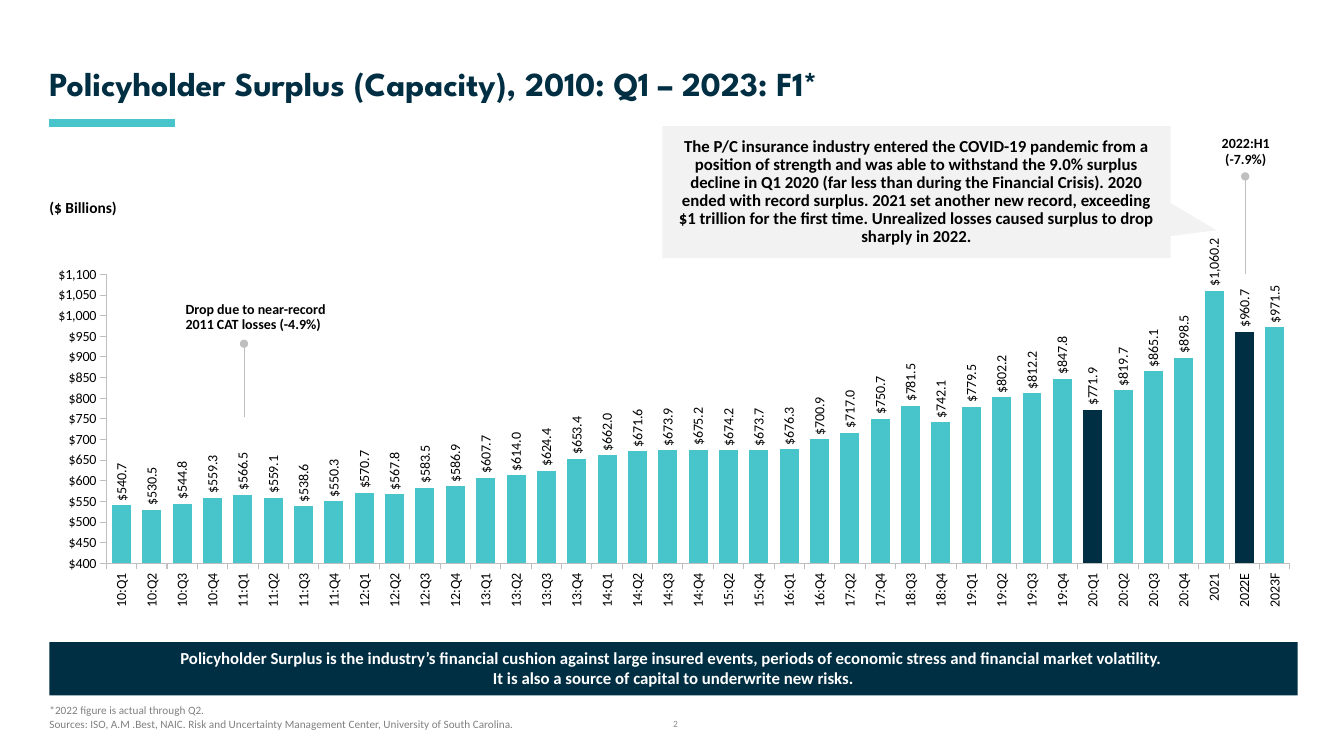
from dataclasses import dataclass

from pptx import Presentation
from pptx.chart.data import CategoryChartData
from pptx.dml.color import RGBColor
from pptx.enum.chart import XL_CHART_TYPE, XL_LABEL_POSITION, XL_TICK_MARK
from pptx.enum.shapes import MSO_CONNECTOR, MSO_SHAPE
from pptx.enum.text import MSO_ANCHOR, PP_ALIGN
from pptx.oxml import parse_xml
from pptx.oxml.ns import nsdecls, qn
from pptx.util import Inches, Pt

COLUMN = XL_CHART_TYPE.COLUMN_CLUSTERED
OUTSIDE_END = XL_LABEL_POSITION.OUTSIDE_END
TICK_OUT, TICK_NONE = XL_TICK_MARK.OUTSIDE, XL_TICK_MARK.NONE
STRAIGHT = MSO_CONNECTOR.STRAIGHT
RECTANGLE, CALLOUT = MSO_SHAPE.RECTANGLE, MSO_SHAPE.RECTANGULAR_CALLOUT
TOP, MIDDLE, BOTTOM = MSO_ANCHOR.TOP, MSO_ANCHOR.MIDDLE, MSO_ANCHOR.BOTTOM
LEFT, CENTER = PP_ALIGN.LEFT, PP_ALIGN.CENTER


@dataclass(frozen=True)
class Theme:
    """Colours, fonts and type sizes of the slide."""
    navy: str = "002E42"
    teal: str = "47C5CA"
    panel: str = "F2F2F2"
    rule: str = "BFBFBF"
    source: str = "808080"
    number: str = "8C8C8C"
    black: str = "000000"
    white: str = "FFFFFF"
    heading_font: str = "League Spartan"
    body_font: str = "Calibri"
    title: float = 24
    message: float = 12
    unit: float = 11
    label: float = 10
    footnote: float = 8
    page: float = 6.8


THEME = Theme()
SURPLUS = {
    "10:Q1": 540.7, "10:Q2": 530.5, "10:Q3": 544.8, "10:Q4": 559.3,
    "11:Q1": 566.5, "11:Q2": 559.1, "11:Q3": 538.6, "11:Q4": 550.3,
    "12:Q1": 570.7, "12:Q2": 567.8, "12:Q3": 583.5, "12:Q4": 586.9,
    "13:Q1": 607.7, "13:Q2": 614.0, "13:Q3": 624.4, "13:Q4": 653.4,
    "14:Q1": 662.0, "14:Q2": 671.6, "14:Q3": 673.9, "14:Q4": 675.2,
    "15:Q2": 674.2, "15:Q4": 673.7, "16:Q1": 676.3, "16:Q4": 700.9,
    "17:Q2": 717.0, "17:Q4": 750.7, "18:Q3": 781.5, "18:Q4": 742.1,
    "19:Q1": 779.5, "19:Q2": 802.2, "19:Q3": 812.2, "19:Q4": 847.8,
    "20:Q1": 771.9, "20:Q2": 819.7, "20:Q3": 865.1, "20:Q4": 898.5,
    "2021": 1060.2, "2022E": 960.7, "2023F": 971.5,
}
HIGHLIGHTS = ("20:Q1", "2022E")


def color(value):
    """Turn a hex string into a colour."""
    return RGBColor.from_string(value)


def format_font(font, size, fill=THEME.black, name=THEME.body_font, bold=False):
    """Apply the type settings to a font."""
    font.size, font.name, font.bold = Pt(size), name, bold
    font.color.rgb = color(fill)


def write(shape, *lines, align=LEFT, anchor=TOP, insets=(0, 0, 0, 0), wrap=True,
          spacing=1.0, before=0, **font):
    """Fill a shape with one formatted paragraph per line."""
    frame = shape.text_frame
    frame.word_wrap, frame.vertical_anchor = wrap, anchor
    frame.margin_left, frame.margin_top, frame.margin_right, frame.margin_bottom = map(Inches, insets)
    for index, line in enumerate(lines):
        paragraph = frame.add_paragraph() if index else frame.paragraphs[0]
        paragraph.text = line
        paragraph.alignment, paragraph.line_spacing = align, spacing
        paragraph.space_before = Pt(before if index else 0)
        for run in paragraph.runs:
            format_font(run.font, **font)


def add_text(slide, box, *lines, **style):
    """Add a text box with formatted text."""
    write(slide.shapes.add_textbox(*map(Inches, box)), *lines, **style)


def add_panel(slide, kind, box, fill):
    """Add a flat filled shape without an outline."""
    shape = slide.shapes.add_shape(kind, *map(Inches, box))
    shape.shadow.inherit = False
    shape.fill.solid()
    shape.fill.fore_color.rgb = color(fill)
    shape.line.fill.background()
    return shape


def add_line(slide, start, end, fill, width, dot=False):
    """Add a straight line, with an optional dot at its end."""
    line = slide.shapes.add_connector(STRAIGHT, *map(Inches, start + end))
    line.line.color.rgb, line.line.width = color(fill), Pt(width)
    if dot:
        line.line._get_or_add_ln().append(parse_xml(f'<a:tailEnd {nsdecls("a")} type="oval"/>'))
    line._element.spPr.append(parse_xml(f'<a:effectLst {nsdecls("a")}/>'))


def add_title(slide, box):
    """Add the headline and the accent rule beneath it."""
    left, top, width, height = box
    add_text(slide, box, "Policyholder Surplus (Capacity), 2010: Q1 – 2023: F1*", anchor=BOTTOM,
             insets=(0, 0.05, 0.1, 0.05), spacing=0.9, size=THEME.title, fill=THEME.navy,
             name=THEME.heading_font, bold=True)
    rule_top = top + height + 0.14
    add_line(slide, (left, rule_top), (left + 1.25, rule_top), THEME.teal, 6)


def rotate_text(element):
    """Turn chart labels to read upwards."""
    body = element.find(qn("c:txPr")).find(qn("a:bodyPr"))
    body.set("rot", "-5400000")
    body.set("vert", "horz")


def place_plot(chart, left, top, width, height):
    """Fix the inner plot area as fractions of the chart."""
    area = chart._chartSpace.chart.plotArea
    for layout in area.findall(qn("c:layout")):
        area.remove(layout)
    places = "".join(f'<c:{tag} val="{value}"/>' for tag, value in
                     (("xMode", "edge"), ("yMode", "edge"), ("x", left), ("y", top),
                      ("w", width), ("h", height)))
    area.insert(0, parse_xml(f'<c:layout {nsdecls("c")}><c:manualLayout>'
                             f'<c:layoutTarget val="inner"/>{places}</c:manualLayout></c:layout>'))


def add_surplus_chart(slide, box):
    """Add the column chart of policyholder surplus."""
    data = CategoryChartData()
    data.categories = list(SURPLUS)
    data.add_series("Series 1", list(SURPLUS.values()))
    chart = slide.shapes.add_chart(COLUMN, *map(Inches, box), data).chart
    chart.has_legend = chart.has_title = False
    format_font(chart.font, THEME.label)
    place_plot(chart, 0.05, 0.11, 0.94, 0.73)

    for axis in (chart.category_axis, chart.value_axis):
        axis.has_major_gridlines = False
        axis.major_tick_mark, axis.minor_tick_mark = TICK_OUT, TICK_NONE
        axis.format.line.color.rgb, axis.format.line.width = color(THEME.rule), Pt(0.75)
        format_font(axis.tick_labels.font, THEME.label)
    rotate_text(chart.category_axis._element)
    values = chart.value_axis
    values.minimum_scale, values.maximum_scale, values.major_unit = 400, 1100, 50
    values.tick_labels.number_format = r"\$#,##0"
    values.tick_labels.number_format_is_linked = False

    plot = chart.plots[0]
    plot.gap_width, plot.vary_by_categories = 60, False
    series = plot.series[0]
    series.invert_if_negative = False
    series.format.fill.solid()
    series.format.fill.fore_color.rgb = color(THEME.teal)
    for quarter in HIGHLIGHTS:
        fill = series.points[list(SURPLUS).index(quarter)].format.fill
        fill.solid()
        fill.fore_color.rgb = color(THEME.navy)
    labels = series.data_labels
    labels.show_value, labels.position = True, OUTSIDE_END
    labels.number_format, labels.number_format_is_linked = r"\$#,##0.0", False
    format_font(labels.font, THEME.label)
    rotate_text(labels._element)


def add_marker(slide, box, text, stem, **style):
    """Add a note with a dotted stem given as x offset, gap and length."""
    left, top, width, height = box
    offset, gap, length = stem
    add_text(slide, box, text, size=THEME.label, bold=True, **style)
    x, dot_y = left + offset, top + height + gap
    add_line(slide, (x, dot_y + length), (x, dot_y), THEME.rule, 0.5, dot=True)


def add_callout(slide, box):
    """Add the speech panel that points at the 2021 column."""
    callout = add_panel(slide, CALLOUT, box, THEME.panel)
    callout.adjustments[0], callout.adjustments[1] = 0.59, 0.29
    write(callout, "The P/C insurance industry entered the COVID-19 pandemic from a position of strength "
          "and was able to withstand the 9.0% surplus decline in Q1 2020 (far less than during the "
          "Financial Crisis). 2020 ended with record surplus. 2021 set another new record, exceeding "
          "$1 trillion for the first time. Unrealized losses caused surplus to drop sharply in 2022.",
          align=CENTER, anchor=MIDDLE, insets=(0.1, 0.07, 0.1, 0.07), spacing=0.9,
          size=THEME.message, bold=True)


def add_footer(slide, box):
    """Add the message band, the sources and the page number."""
    left, top, width, height = box
    band = add_panel(slide, RECTANGLE, box, THEME.navy)
    write(band, "Policyholder Surplus is the industry’s financial cushion against large insured events, "
          "periods of economic stress and financial market volatility. \n"
          "It is also a source of capital to underwrite new risks.", align=CENTER, anchor=MIDDLE,
          insets=(0.1, 0.05, 0.1, 0.05), spacing=0.95, size=THEME.message, fill=THEME.white, bold=True)
    add_text(slide, (left + 4.71, top + 0.71, 3, 0.2), "2", align=CENTER, anchor=MIDDLE,
             size=THEME.page, fill=THEME.number)
    add_text(slide, (left, top + 0.63, 9.45, 0.26), "*2022 figure is actual through Q2.",
             "Sources: ISO, A.M .Best, NAIC. Risk and Uncertainty Management Center, "
             "University of South Carolina.", spacing=0.85, before=2, size=THEME.footnote, fill=THEME.source)


def main():
    """Build and save the slide."""
    presentation = Presentation()
    presentation.slide_width, presentation.slide_height = Inches(13.33), Inches(7.5)
    slide = presentation.slides.add_slide(presentation.slide_layouts[6])
    add_surplus_chart(slide, (0.43, 2.29, 12.49, 3.93))
    add_marker(slide, (1.84, 3, 1.42, 0.3), "Drop due to near-record \n2011 CAT losses (-4.9%)",
               (0.58, 0.11, 0.73), spacing=0.9)
    add_marker(slide, (12.11, 1.33, 0.49, 0.34), "2022:H1\n(-7.9%)", (0.24, 0.08, 0.97),
               align=CENTER, wrap=False)
    add_footer(slide, (0.49, 6.37, 12.38, 0.53))
    add_callout(slide, (6.57, 1.25, 5.04, 1.31))
    add_text(slide, (0.49, 1.98, 0.67, 0.17), "($ Billions)", anchor=MIDDLE, wrap=False,
             spacing=0.9, size=THEME.unit, bold=True)
    add_title(slide, (0.49, 0.62, 12.49, 0.46))
    presentation.save("out.pptx")


if __name__ == "__main__":
    main()
